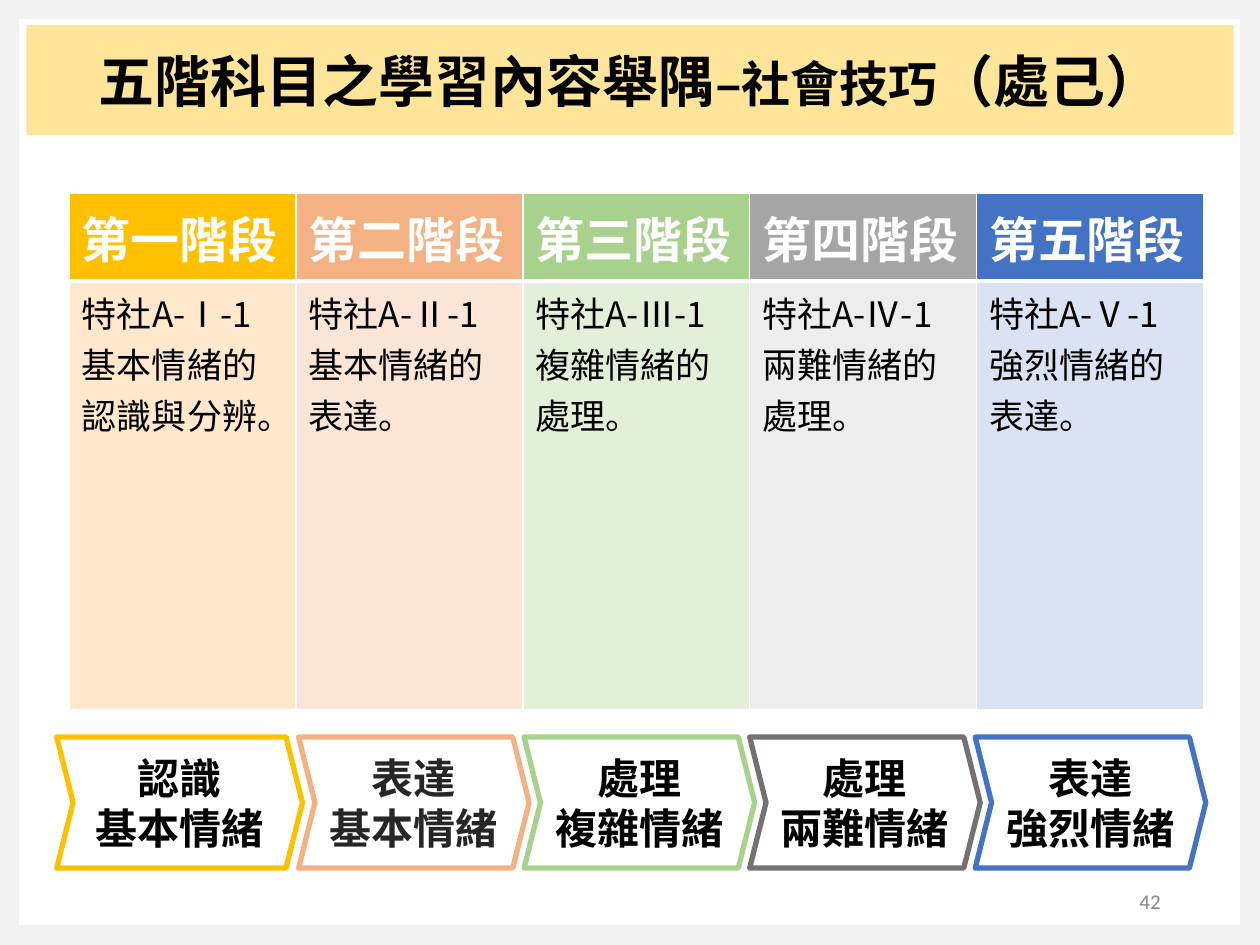
from dataclasses import dataclass

from lxml import etree
from pptx import Presentation
from pptx.dml.color import RGBColor
from pptx.enum.shapes import MSO_SHAPE
from pptx.enum.text import MSO_ANCHOR, MSO_AUTO_SIZE, PP_ALIGN
from pptx.oxml import parse_xml
from pptx.oxml.ns import nsdecls, qn
from pptx.util import Inches, Pt

CENTER, RIGHT = PP_ALIGN.CENTER, PP_ALIGN.RIGHT
TOP, MIDDLE = MSO_ANCHOR.TOP, MSO_ANCHOR.MIDDLE
RECTANGLE, CHEVRON = MSO_SHAPE.RECTANGLE, MSO_SHAPE.CHEVRON


@dataclass(frozen=True)
class Theme:
    font: str = "Noto Sans CJK SC"
    number_font: str = "Calibri"
    backdrop: str = "F2F2F2"
    white: str = "FFFFFF"
    black: str = "000000"
    dark: str = "262626"
    grey: str = "898989"
    banner: str = "FFC000"
    title: int = 32
    subtitle: int = 28
    header: int = 28
    body: int = 20
    step: int = 24
    number: int = 12


THEME = Theme()

# stage, code, content, step lines, header fill, body fill, step outline, step text
STAGES = [
    ("第一階段", "特社A-Ⅰ-1", "基本情緒的認識與分辨。", ("認識", "基本情緒"),
     "FFC000", "FFE8CC", "FFC000", THEME.black),
    ("第二階段", "特社A-Ⅱ-1", "基本情緒的表達。", ("表達", "基本情緒"),
     "F4B183", "FBE5D6", "F4B183", THEME.dark),
    ("第三階段", "特社A-Ⅲ-1", "複雜情緒的處理。", ("處理", "複雜情緒"),
     "A9D18E", "E2F0D9", "A9D18E", THEME.black),
    ("第四階段", "特社A-Ⅳ-1", "兩難情緒的處理。", ("處理", "兩難情緒"),
     "A5A5A5", "EDEDED", "767171", THEME.black),
    ("第五階段", "特社A-Ⅴ-1", "強烈情緒的表達。", ("表達", "強烈情緒"),
     "4472C4", "DAE3F3", "4472C4", THEME.black),
]


def add_run(paragraph, text, size, color, bold=False, font=THEME.font):
    """Add a run whose Latin and East Asian fonts agree."""
    run = paragraph.add_run()
    run.text = text
    run.font.size = Pt(size)
    run.font.bold = bold
    run.font.name = font
    run.font.color.rgb = RGBColor.from_string(color)
    latin = run.font._element.find(qn("a:latin"))
    east_asian = etree.Element(qn("a:ea"), typeface=font)
    latin.addnext(east_asian)


def fill_cell(cell, lines, size, color, bold, fill, anchor, edges):
    """Write one paragraph per line; edges maps a border tag to its width in points."""
    cell.fill.solid()
    cell.fill.fore_color.rgb = RGBColor.from_string(fill)
    cell.vertical_anchor = anchor
    for index, line in enumerate(lines):
        frame = cell.text_frame
        paragraph = frame.paragraphs[0] if index == 0 else frame.add_paragraph()
        add_run(paragraph, line, size, color, bold)
    properties = cell._tc.get_or_add_tcPr()
    for position, (tag, width) in enumerate(edges.items()):
        properties.insert(position, parse_xml(
            f'<a:{tag} {nsdecls("a")} w="{Pt(width)}"><a:solidFill>'
            f'<a:srgbClr val="{THEME.white}"/></a:solidFill></a:{tag}>'))


presentation = Presentation()
presentation.slide_width = Inches(10)
presentation.slide_height = Inches(7.5)
slide = presentation.slides.add_slide(presentation.slide_layouts[5])
slide.background.fill.solid()
slide.background.fill.fore_color.rgb = RGBColor.from_string(THEME.backdrop)

# White panel behind everything
panel = slide.shapes.add_shape(
    RECTANGLE, Inches(0.15), Inches(0.15), Inches(9.69), Inches(7.19))
panel.shadow.inherit = False
panel.fill.solid()
panel.fill.fore_color.rgb = RGBColor.from_string(THEME.white)
panel.line.fill.background()

# Title banner
title = slide.shapes.title
panel._element.addnext(title._element)
title.left, title.top = Inches(0.21), Inches(0.2)
title.width, title.height = Inches(9.58), Inches(0.87)
title.fill.solid()
title.fill.fore_color.rgb = RGBColor.from_string(THEME.banner)
banner_color = title._element.spPr.find(qn("a:solidFill"))[0]
etree.SubElement(banner_color, qn("a:alpha"), val="40000")
title.text_frame.auto_size = MSO_AUTO_SIZE.NONE
title.text_frame.vertical_anchor = MIDDLE
heading = title.text_frame.paragraphs[0]
heading.alignment = CENTER
for text, size in [("五階科目之學習內容舉隅", THEME.title),
                   ("–社會技巧", THEME.subtitle),
                   ("（處己）", THEME.title)]:
    add_run(heading, text, size, THEME.black, bold=True)

# Stage table
table = slide.shapes.add_table(
    2, len(STAGES), Inches(0.55), Inches(1.53), Inches(9), Inches(4.1)).table
table.rows[0].height = Inches(0.7)
table.rows[1].height = Inches(3.4)
header_edges = {"lnL": 1, "lnR": 1, "lnT": 1, "lnB": 3}
body_edges = {"lnL": 1, "lnR": 1, "lnT": 3, "lnB": 1}
for column, (stage, code, content, _, strong, pale, _, _) in enumerate(STAGES):
    table.columns[column].width = Inches(1.8)
    fill_cell(table.cell(0, column), [stage], THEME.header, THEME.white, True,
              strong, MIDDLE, header_edges)
    fill_cell(table.cell(1, column), [code, content], THEME.body, THEME.black, False,
              pale, TOP, body_edges)

# Step chevrons: the first is wider, the rest follow at an even pitch
STEP_HEIGHT, STEP_POINT = 1.04, 0.13
for index, (_, _, _, lines, _, _, outline, color) in enumerate(STAGES):
    left, width = (0.45, 1.95) if index == 0 else (2.37 + 1.79 * (index - 1), 1.83)
    step = slide.shapes.add_shape(
        CHEVRON, Inches(left), Inches(5.85), Inches(width), Inches(STEP_HEIGHT))
    step.adjustments[0] = STEP_POINT / STEP_HEIGHT
    step.shadow.inherit = False
    step.fill.solid()
    step.fill.fore_color.rgb = RGBColor.from_string(THEME.white)
    step.line.color.rgb = RGBColor.from_string(outline)
    step.line.width = Pt(3)
    frame = step.text_frame
    frame.margin_left = frame.margin_right = frame.margin_top = frame.margin_bottom = 0
    frame.vertical_anchor = MIDDLE
    for row, line in enumerate(lines):
        paragraph = frame.paragraphs[0] if row == 0 else frame.add_paragraph()
        paragraph.alignment = CENTER
        paragraph.line_spacing = Pt(29)
        add_run(paragraph, line, THEME.step, color, bold=True)

# Page number
page_number = slide.shapes.add_textbox(
    Inches(7.06), Inches(6.95), Inches(2.25), Inches(0.4)).text_frame
page_number.word_wrap = True
page_number.vertical_anchor = MIDDLE
page_number.paragraphs[0].alignment = RIGHT
add_run(page_number.paragraphs[0], "42", THEME.number, THEME.grey, font=THEME.number_font)

presentation.save("out.pptx")
